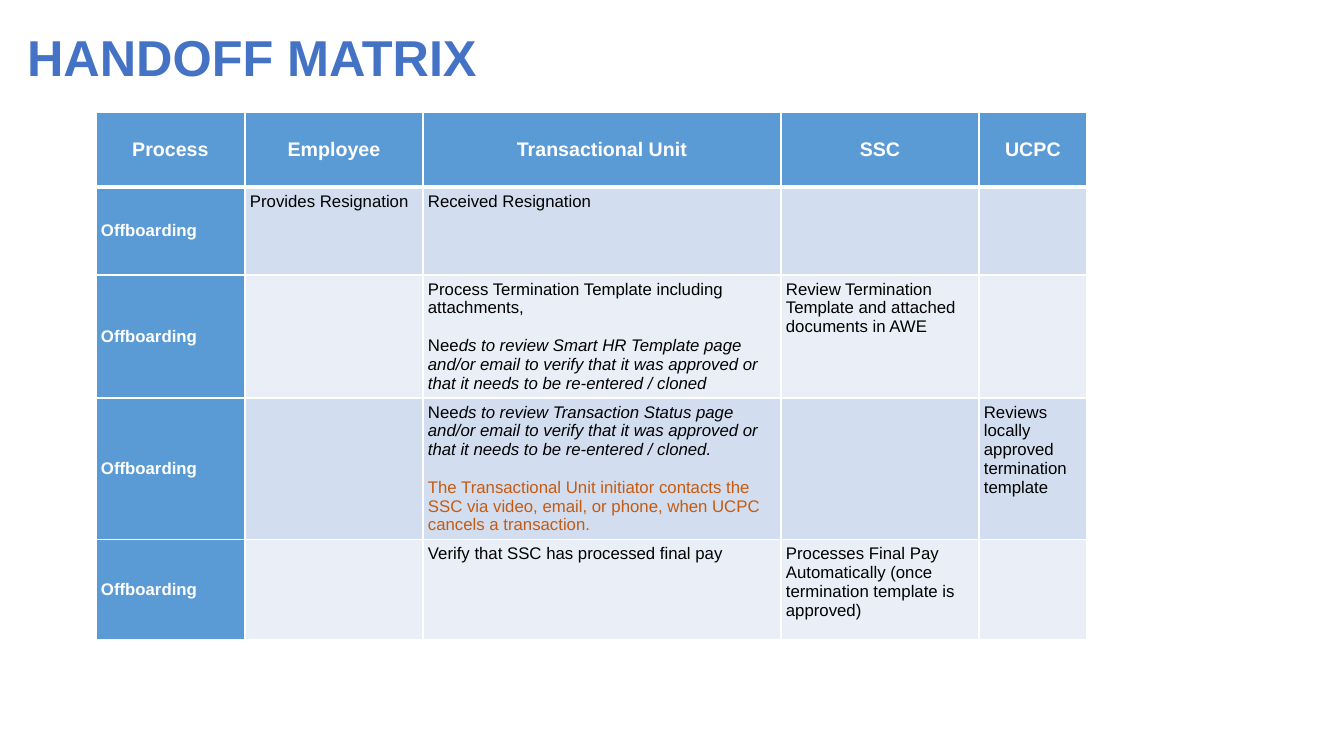
import pptx
import pptx.util
import pptx.dml.color
import pptx.enum.text
import pptx.oxml
import pptx.oxml.ns

RGB = pptx.dml.color.RGBColor
Pt = pptx.util.Pt
Align = pptx.enum.text.PP_ALIGN
Anchor = pptx.enum.text.MSO_ANCHOR

TITLE = RGB(0x44, 0x72, 0xC4)
HEAD = RGB(0x5B, 0x9B, 0xD5)
BANDS = (RGB(0xD2, 0xDE, 0xEF), RGB(0xEA, 0xEF, 0xF7))
WHITE = RGB(0xFF, 0xFF, 0xFF)
BLACK = RGB(0x00, 0x00, 0x00)
ORANGE = RGB(0xC5, 0x5A, 0x11)

WIDTHS = (149, 178, 358, 198, 108)
HEIGHTS = (75, 88, 123, 141, 100)
HEADS = ("Process", "Employee", "Transactional Unit", "SSC", "UCPC")

# A cell is a list of paragraphs: (upright text, italic text, colour)
STEPS = (
    {1: [("Provides Resignation", "", BLACK)],
     2: [("Received Resignation", "", BLACK)]},
    {2: [("Process Termination Template including attachments,", "", BLACK),
         ("Nee", "ds to review Smart HR Template page and/or email to verify "
          "that it was approved or that it needs to be re-entered / cloned",
          BLACK)],
     3: [("Review Termination Template and attached documents in AWE", "",
          BLACK)]},
    {2: [("Nee", "ds to review Transaction Status page and/or email to verify "
          "that it was approved or that it needs to be re-entered / cloned.",
          BLACK),
         ("The Transactional Unit initiator contacts the SSC via video, email, "
          "or phone, when UCPC cancels a transaction.", "", ORANGE)],
     4: [("Reviews locally approved termination template", "", BLACK)]},
    {2: [("Verify that SSC has processed final pay", "", BLACK)],
     3: [("Processes Final Pay Automatically (once termination template is "
          "approved)", "", BLACK)]},
)


def px(n):
    return pptx.util.Emu(round(n * 914400 / 100.8))


def style(para, size, color, bold=False):
    font = para.font
    font.name, font.size, font.bold = "Arial", Pt(size), bold
    font.color.rgb = color


def edge(cell, side, width):
    line = pptx.oxml.parse_xml(
        f'<a:ln{side} {pptx.oxml.ns.nsdecls("a")} w="{Pt(width)}">'
        f'<a:solidFill><a:srgbClr val="{WHITE}"/></a:solidFill></a:ln{side}>')
    cell._tc.get_or_add_tcPr().append(line)


def dress(cell, row, fill):
    """Set the borders, margins and fill of a cell."""
    for side in "LRTB":
        thick = (row, side) in ((0, "B"), (1, "T"))
        edge(cell, side, 3 if thick else 1)
    cell.margin_left = cell.margin_right = px(5)
    cell.margin_top = cell.margin_bottom = px(5)
    cell.fill.solid()
    cell.fill.fore_color.rgb = fill


def label(cell, text, size, align):
    cell.vertical_anchor = Anchor.MIDDLE
    para = cell.text_frame.paragraphs[0]
    para.text, para.alignment = text, align
    style(para, size, WHITE, True)


def body(cell, paras):
    frame = cell.text_frame
    for i, (plain, slant, color) in enumerate(paras):
        para = frame.add_paragraph() if i else frame.paragraphs[0]
        if i:
            para.space_before = Pt(13.4)
        para.add_run().text = plain
        if slant:
            run = para.add_run()
            run.text, run.font.italic = slant, True
        style(para, 12, color)


def add_title(slide, text):
    box = slide.shapes.title
    box.left, box.top, box.width, box.height = map(px, (17, 18, 1173, 76))
    box.text_frame.vertical_anchor = Anchor.MIDDLE
    para = box.text_frame.paragraphs[0]
    para.text, para.alignment = text, Align.LEFT
    style(para, 36, TITLE, True)


def add_grid(slide):
    table = slide.shapes.add_table(
        len(HEIGHTS), len(WIDTHS), px(96), px(112),
        px(sum(WIDTHS)), px(sum(HEIGHTS))).table
    table.first_row = table.horz_banding = False
    for col, width in zip(table.columns, WIDTHS):
        col.width = px(width)
    for row, high in zip(table.rows, HEIGHTS):
        row.height = px(high)

    # Header row
    for c, text in enumerate(HEADS):
        dress(table.cell(0, c), 0, HEAD)
        label(table.cell(0, c), text, 14, Align.CENTER)

    # Process steps
    for r, step in enumerate(STEPS, 1):
        for c in range(len(WIDTHS)):
            cell = table.cell(r, c)
            dress(cell, r, BANDS[(r - 1) % 2] if c else HEAD)
            body(cell, step.get(c, []))
        label(table.cell(r, 0), "Offboarding", 12, Align.LEFT)


def main():
    deck = pptx.Presentation()
    deck.slide_width, deck.slide_height = px(1344), px(756)
    slide = deck.slides.add_slide(deck.slide_layouts[5])
    add_title(slide, "HANDOFF MATRIX")
    add_grid(slide)
    deck.save("out.pptx")


if __name__ == "__main__":
    main()
